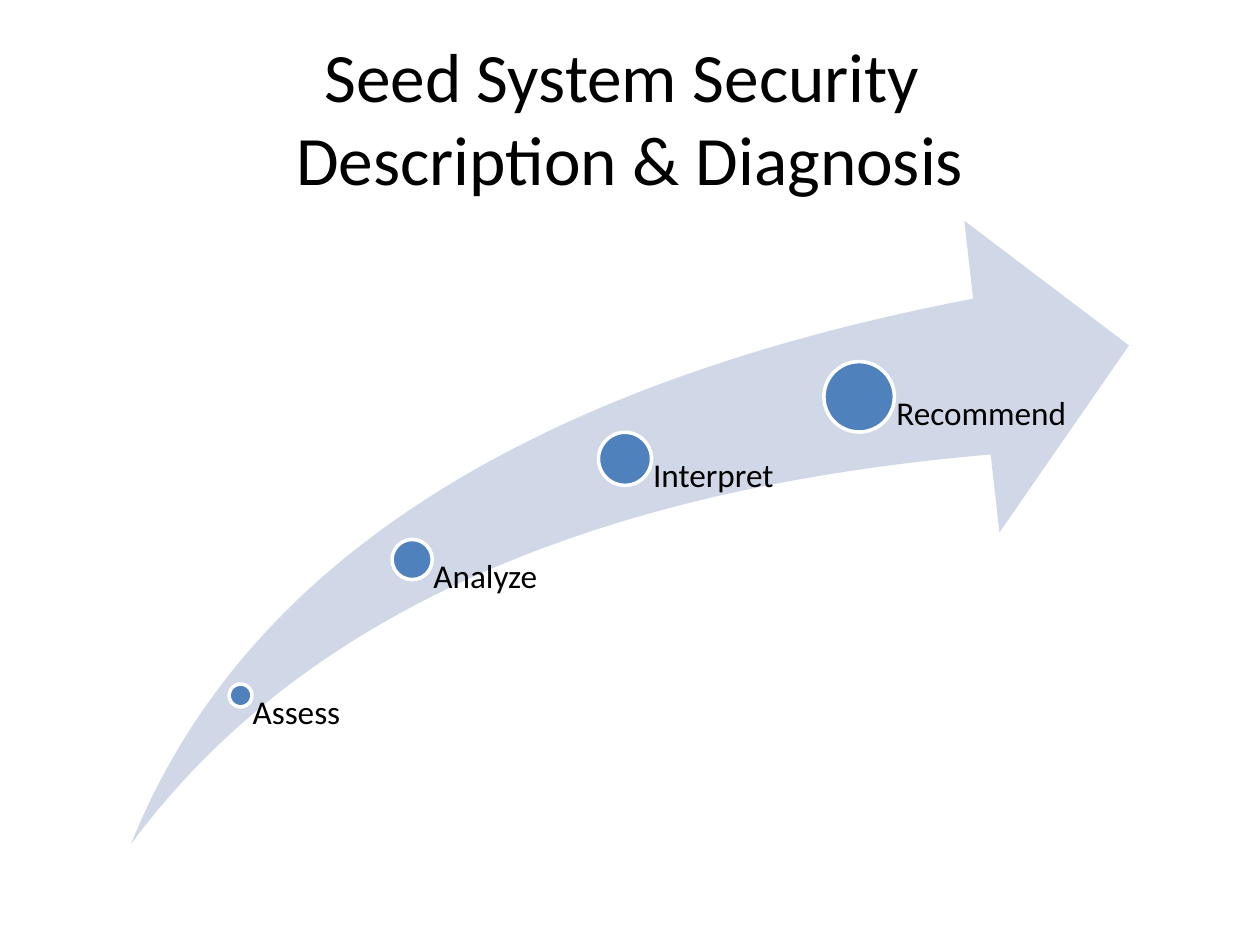
from dataclasses import dataclass

from pptx import Presentation
from pptx import util as u
from pptx.dml.color import RGBColor
from pptx.enum import shapes, text


@dataclass(frozen=True)
class Theme:
    font: str = "Calibri"
    ink: RGBColor = RGBColor(0x00, 0x00, 0x00)
    arrow: RGBColor = RGBColor(0xD0, 0xD8, 0xE8)
    dot: RGBColor = RGBColor(0x4F, 0x81, 0xBD)
    outline: RGBColor = RGBColor(0xFF, 0xFF, 0xFF)
    title_size: float = 39.6
    label_size: float = 19


@dataclass(frozen=True)
class Step:
    """A stage on the arrow; lengths in centimetres."""
    name: str
    center_x: float
    center_y: float
    diameter: float
    label_width: float = 4.22


THEME = Theme()
ARROW_LEFT, ARROW_TOP, ARROW_WIDTH, ARROW_HEIGHT = 2.64, 4.45, 20.12, 12.57
ARROW_BOTTOM = ARROW_TOP + ARROW_HEIGHT
INSET_RATIO = 0.53  # label inset as a share of the dot's diameter

TITLE_LINES = ["Seed System Security ", "Description & Diagnosis"]
STEPS = [
    Step("Assess", 4.85, 14.02, 0.46, 3.43),
    Step("Analyze", 8.31, 11.28, 0.81),
    Step("Interpret", 12.6, 9.25, 1.07),
    Step("Recommend", 17.32, 8.0, 1.42),
]


def add_span(para, words: str, size: float) -> None:
    span = para.add_run()
    span.text = words
    span.font.name = THEME.font
    span.font.size = u.Pt(size)
    span.font.color.rgb = THEME.ink


def add_title(page, lines: list[str]) -> None:
    box = page.shapes.add_textbox(u.Cm(1.27), u.Cm(0.76), u.Cm(22.86), u.Cm(3.18))
    frame = box.text_frame
    frame.word_wrap = True
    frame.vertical_anchor = text.MSO_ANCHOR.MIDDLE
    para = frame.paragraphs[0]
    para.alignment = text.PP_ALIGN.CENTER
    for index, line in enumerate(lines):
        if index:
            para.add_line_break()
        add_span(para, line, THEME.title_size)


def add_arrow(page) -> None:
    arrow = page.shapes.add_shape(
        shapes.MSO_SHAPE.SWOOSH_ARROW,
        u.Cm(ARROW_LEFT), u.Cm(ARROW_TOP), u.Cm(ARROW_WIDTH), u.Cm(ARROW_HEIGHT))
    arrow.adjustments[0] = 0.25
    arrow.adjustments[1] = 0.25
    arrow.shadow.inherit = False
    arrow.fill.solid()
    arrow.fill.fore_color.rgb = THEME.arrow
    arrow.line.fill.background()


def add_step(page, step: Step) -> None:
    # Dot, centred on the arrow's curve
    radius = step.diameter / 2
    dot = page.shapes.add_shape(
        shapes.MSO_SHAPE.OVAL,
        u.Cm(step.center_x - radius), u.Cm(step.center_y - radius),
        u.Cm(step.diameter), u.Cm(step.diameter))
    dot.shadow.inherit = False
    dot.fill.solid()
    dot.fill.fore_color.rgb = THEME.dot
    dot.line.color.rgb = THEME.outline
    dot.line.width = u.Pt(2)

    # Label, from the dot's centre down to the arrow's foot
    box = page.shapes.add_textbox(
        u.Cm(step.center_x), u.Cm(step.center_y),
        u.Cm(step.label_width), u.Cm(ARROW_BOTTOM - step.center_y))
    frame = box.text_frame
    frame.word_wrap = True
    frame.margin_left = u.Cm(step.diameter * INSET_RATIO)
    frame.margin_top = frame.margin_right = frame.margin_bottom = 0
    para = frame.paragraphs[0]
    para.line_spacing = 0.9
    add_span(para, step.name, THEME.label_size)


def main() -> None:
    deck = Presentation()
    deck.slide_width, deck.slide_height = u.Cm(25.4), u.Cm(19.05)
    page = deck.slides.add_slide(deck.slide_layouts[6])

    add_title(page, TITLE_LINES)
    add_arrow(page)
    for step in STEPS:
        add_step(page, step)

    deck.save("out.pptx")


if __name__ == "__main__":
    main()
